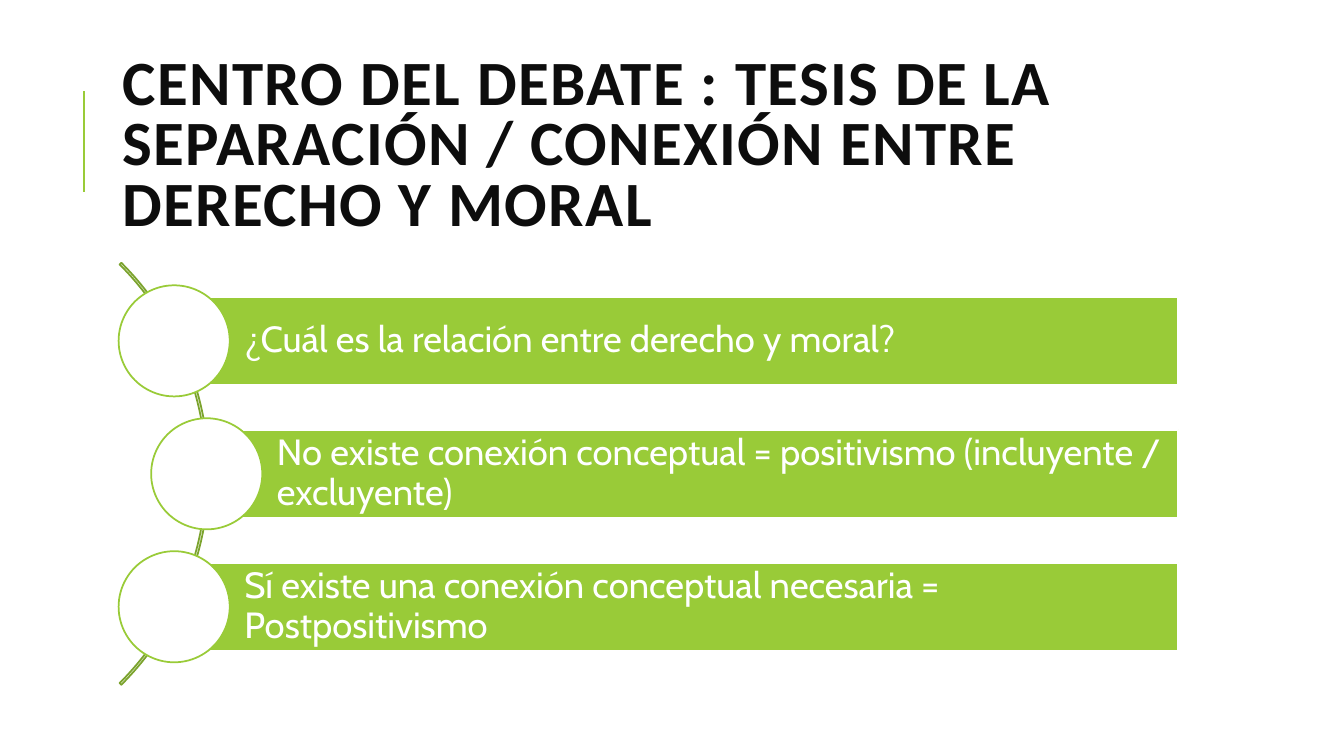
from dataclasses import dataclass

from pptx import Presentation
from pptx.dml.color import RGBColor
from pptx.enum.shapes import MSO_CONNECTOR as Connector, MSO_SHAPE as Preset
from pptx.enum.text import MSO_ANCHOR as Anchor, PP_ALIGN as Align
from pptx.oxml.ns import qn
from pptx.shapes.autoshape import Shape
from pptx.slide import Slide
from pptx.text.text import TextFrame
from pptx.util import Cm, Pt
from lxml.etree import SubElement

COLORS = {
    "green": "99CB38",
    "dark green": "7BA32D",
    "white": "FFFFFF",
    "ink": "0D0D0D",
}
TITLE = "CENTRO DEL DEBATE : TESIS DE LA SEPARACIÓN / CONEXIÓN ENTRE DERECHO Y MORAL"

LINE_WIDTH = Pt(1.25)
MIDDLE_Y = 11.94
STEP_Y = 3.35
BAR_RIGHT = 29.69
BAR_HEIGHT = 2.22
CIRCLE_SIZE = 2.8
ARC_LEFT = -9.78
ARC_SIZE = 15.04


@dataclass
class Thesis:
    text: str
    center_x: float


THESES = [
    Thesis("¿Cuál es la relación entre derecho y moral?", 4.39),
    Thesis("No existe conexión conceptual = positivismo (incluyente / excluyente)", 5.21),
    Thesis("Sí existe una conexión conceptual necesaria = Postpositivismo", 4.39),
]


def color(name: str) -> RGBColor:
    return RGBColor.from_string(COLORS[name])


def add_preset(page: Slide, preset: Preset, left: float, top: float, width: float,
               height: float, fill: str | None, line: str) -> Shape:
    """Add a flat preset shape, measured in centimetres; fill None leaves it open."""
    shape = page.shapes.add_shape(preset, Cm(left), Cm(top), Cm(width), Cm(height))
    shape.shadow.inherit = False
    if fill is None:
        shape.fill.background()
    else:
        shape.fill.solid()
        shape.fill.fore_color.rgb = color(fill)
    shape.line.color.rgb = color(line)
    shape.line.width = LINE_WIDTH
    return shape


def write(frame: TextFrame, text: str, font_name: str, size: int, ink: str,
          spacing: float) -> None:
    """Fill a frame with one left-aligned, vertically centred paragraph."""
    frame.word_wrap = True
    frame.vertical_anchor = Anchor.MIDDLE
    para = frame.paragraphs[0]
    para.text = text
    para.alignment = Align.LEFT
    para.line_spacing = spacing
    para.font.name = font_name
    para.font.size = Pt(size)
    para.font.color.rgb = color(ink)


def add_title(page: Slide) -> None:
    rule = page.shapes.add_connector(Connector.STRAIGHT, Cm(2.11), Cm(4.83), Cm(2.11), Cm(2.29))
    rule.line.color.rgb = color("green")
    rule.line.width = Pt(1.5)
    SubElement(rule._element.spPr, qn("a:effectLst"))

    box = page.shapes.add_textbox(Cm(2.84), Cm(1.63), Cm(27), Cm(4.17))
    write(box.text_frame, TITLE, "Calibri", 45, "ink", 0.8)
    para = box.text_frame.paragraphs[0]
    para.font.bold = True
    para.runs[0].font._element.set("spc", "100")


def add_arc(page: Slide) -> None:
    arc = add_preset(page, Preset.BLOCK_ARC, ARC_LEFT, MIDDLE_Y - ARC_SIZE / 2,
                     ARC_SIZE, ARC_SIZE, None, "dark green")
    for index, value in enumerate((189, 27, 0.004)):
        arc.adjustments[index] = value


def add_thesis(page: Slide, thesis: Thesis, center_y: float) -> None:
    """Draw a bar with its circle centred on the bar's left end."""
    bar = add_preset(page, Preset.RECTANGLE, thesis.center_x, center_y - BAR_HEIGHT / 2,
                     BAR_RIGHT - thesis.center_x, BAR_HEIGHT, "green", "white")
    frame = bar.text_frame
    frame.margin_left = Cm(1.77)
    frame.margin_top = frame.margin_right = frame.margin_bottom = Cm(0.18)
    write(frame, thesis.text, "Cabin", 26, "white", 0.9)
    add_preset(page, Preset.OVAL, thesis.center_x - CIRCLE_SIZE / 2,
               center_y - CIRCLE_SIZE / 2, CIRCLE_SIZE, CIRCLE_SIZE, "white", "green")


def main() -> None:
    deck = Presentation()
    deck.slide_width, deck.slide_height = Cm(33.87), Cm(19.05)
    page = deck.slides.add_slide(deck.slide_layouts[6])
    add_title(page)
    add_arc(page)
    for row, thesis in enumerate(THESES):
        add_thesis(page, thesis, MIDDLE_Y + (row - 1) * STEP_Y)
    deck.save("out.pptx")


if __name__ == "__main__":
    main()
